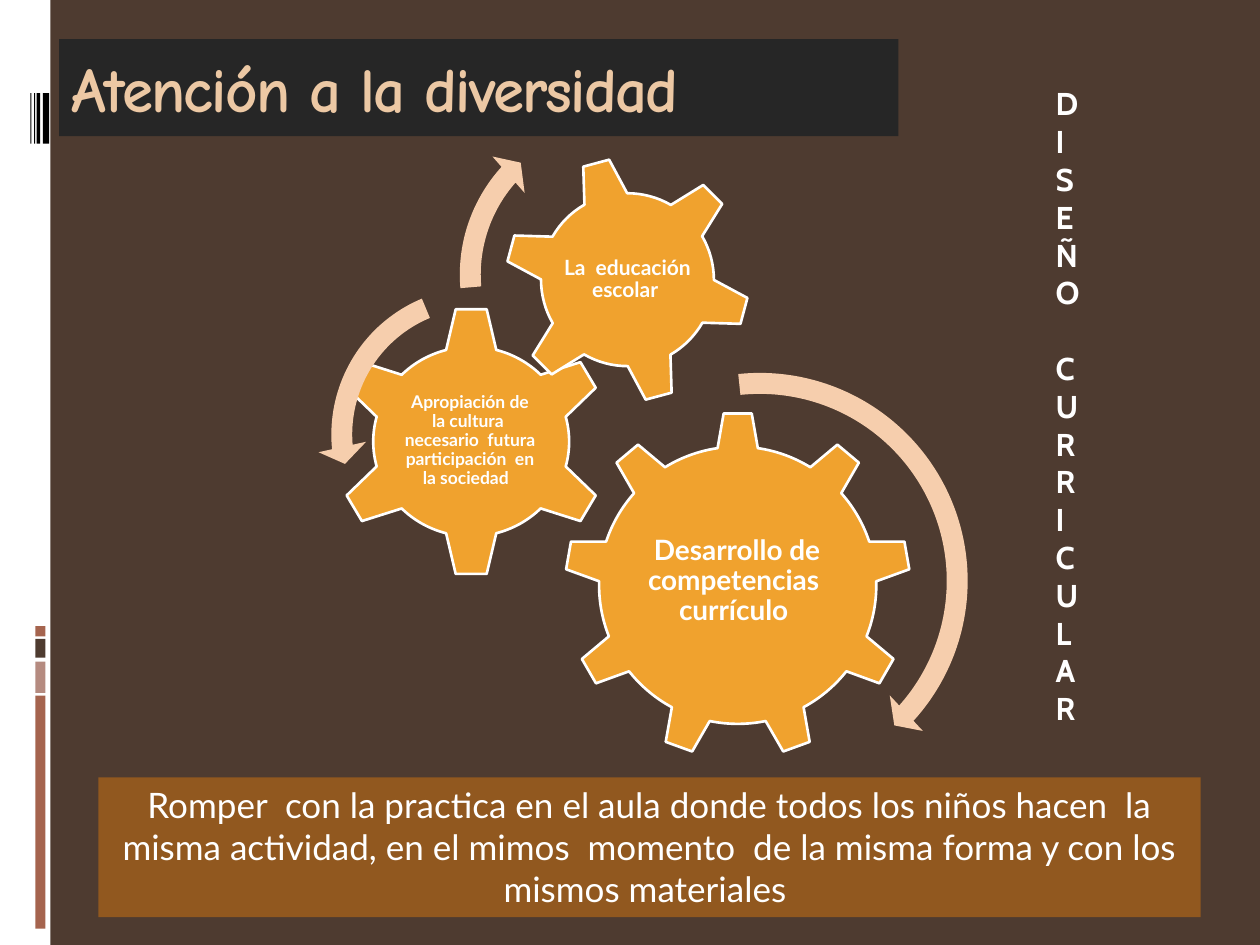
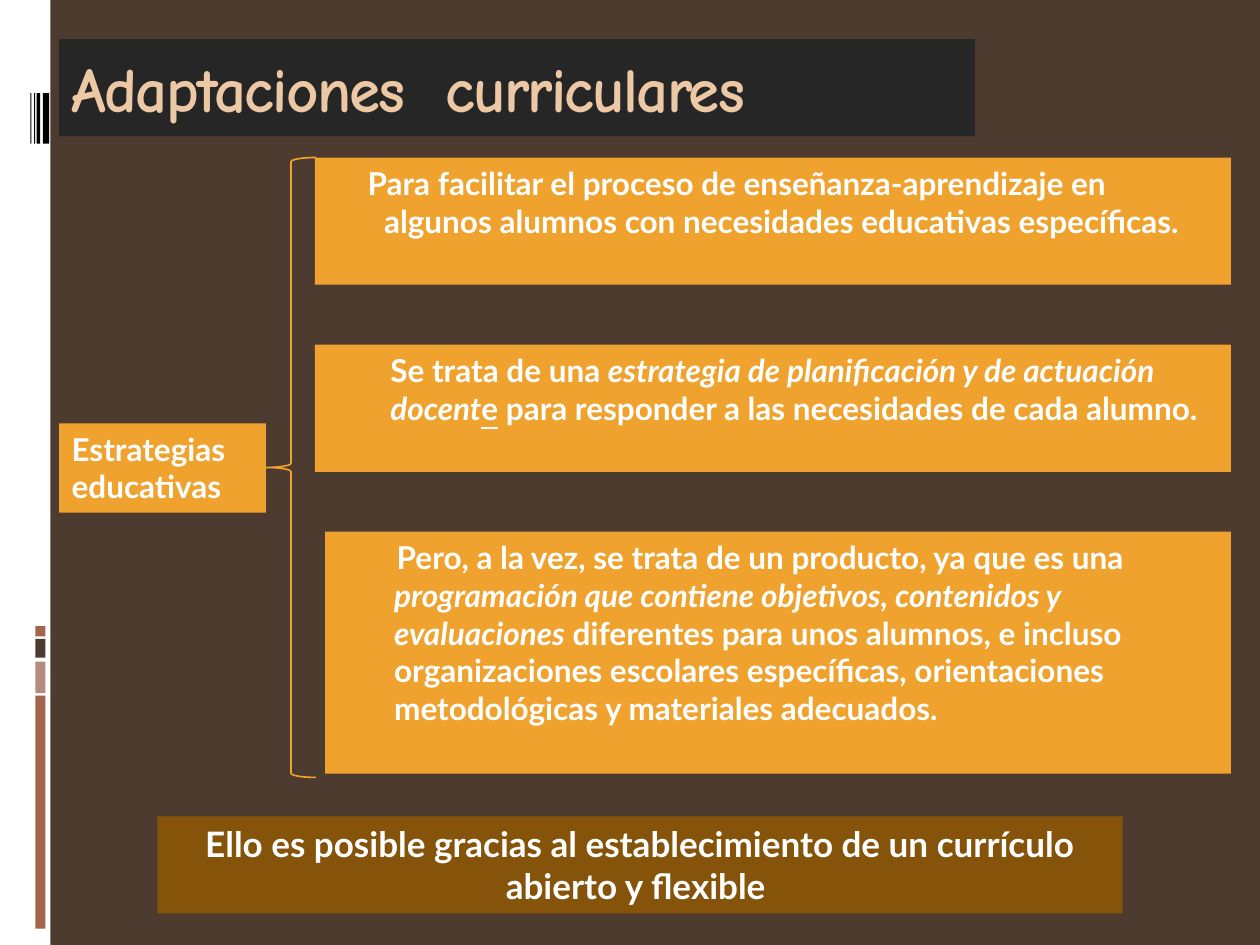
"""Build two slides on attention to diversity and curricular adaptations."""
from dataclasses import dataclass

from pptx import Presentation
from pptx.dml.color import RGBColor
from pptx.enum.shapes import MSO_SHAPE
from pptx.enum.text import MSO_ANCHOR, MSO_AUTO_SIZE, PP_ALIGN
from pptx.oxml.ns import qn
from pptx.util import Inches, Pt


@dataclass(frozen=True)
class Theme:
    background: str = "4E3B30"
    white: str = "FFFFFF"
    black: str = "000000"
    rust: str = "A5644E"
    rose: str = "B58B80"
    title_fill: str = "262626"
    title_text: str = "ECC8A4"
    orange: str = "F0A22E"
    peach: str = "F6CEAD"
    brown: str = "91581F"
    dark_brown: str = "85540A"
    title_font: str = "Comic Neue"
    body_font: str = "Lato"
    column_font: str = "Cabin"
    title_size: int = 36
    conclusion_size: int = 20
    body_size: int = 18


theme = Theme()
presentation = Presentation()
presentation.slide_width, presentation.slide_height = Inches(10), Inches(7.5)
COLUMN = presentation.slide_width / 100
ROW = presentation.slide_height / 75

TITLE = {"name": theme.title_font, "size": Pt(theme.title_size), "bold": True}
BODY = {"name": theme.body_font, "size": Pt(theme.body_size), "bold": True}
CONCLUSION = BODY | {"size": Pt(theme.conclusion_size)}
LETTER = BODY | {"name": theme.column_font}
ITALIC = {"italic": True}
CENTERED = {"alignment": PP_ALIGN.CENTER}


def place(shapes, kind, box, fill=None, line=None, line_width=1.5):
    """Add a preset shape, or a text box when kind is None, on the grid."""
    left, top, width, height = box
    frame = [round(n) for n in (left * COLUMN, top * ROW, width * COLUMN, height * ROW)]
    if kind is None:
        return shapes.add_textbox(*frame)
    shape = shapes.add_shape(kind, *frame)
    shape.shadow.inherit = False
    if fill:
        shape.fill.solid()
        shape.fill.fore_color.rgb = RGBColor.from_string(fill)
    else:
        shape.fill.background()
    if line:
        shape.line.color.rgb = RGBColor.from_string(line)
        shape.line.width = Pt(line_width)
    else:
        shape.line.fill.background()
    return shape


def write(shape, paragraphs, font, layout=None, color=theme.white, frame=None):
    """Fill a shape with paragraphs, each a list of (text, font changes)."""
    text_frame = shape.text_frame
    frame_format = {"word_wrap": True, "auto_size": MSO_AUTO_SIZE.NONE,
                    "vertical_anchor": MSO_ANCHOR.TOP} | (frame or {})
    for name, value in frame_format.items():
        setattr(text_frame, name, value)
    for index, runs in enumerate(paragraphs):
        paragraph = text_frame.add_paragraph() if index else text_frame.paragraphs[0]
        for name, value in ({"alignment": PP_ALIGN.LEFT} | (layout or {})).items():
            setattr(paragraph, name, value)
        for text, changes in runs:
            run = paragraph.add_run()
            run.text = text
            for name, value in (font | changes).items():
                setattr(run.font, name, value)
            run.font.color.rgb = RGBColor.from_string(color)


background = presentation.slide_master.background.fill
background.solid()
background.fore_color.rgb = RGBColor.from_string(theme.background)
title_only = presentation.slide_layouts[5]
for placeholder in list(title_only.placeholders)[1:]:
    title_only.shapes.element.remove(placeholder.element)

slides = []
for heading, title_width in [("Atención a la diversidad", 66.6),
                             ("Adaptaciones  curriculares", 72.7)]:
    slide = presentation.slides.add_slide(title_only)
    title = slide.shapes.title
    position = {"left": 4.7 * COLUMN, "top": 3.1 * ROW,
                "width": title_width * COLUMN, "height": 7.7 * ROW}
    for name, value in position.items():
        setattr(title, name, round(value))
    title.fill.solid()
    title.fill.fore_color.rgb = RGBColor.from_string(theme.title_fill)
    write(title, [[(heading, {})]], TITLE, color=theme.title_text,
          frame={"vertical_anchor": MSO_ANCHOR.MIDDLE})
    for run_properties in title.element.iter(qn("a:rPr")):
        run_properties.set("spc", "-100")
    slides.append(slide)
diversity, adaptations = slides

side_bars = [((0, 0, 4, 75), theme.white)]
for top, height, color in [(55.2, 18.5, theme.rust), (52.5, 2.5, theme.rose),
                           (50.7, 1.5, theme.background), (49.7, 0.8, theme.rust)]:
    side_bars.append(((2.8, top, 0.8, height), color))
for left, width in [(3.4, 0.5), (2.9, 0.3), (2.7, 0.1), (2.4, 0.1)]:
    side_bars.append(((left, 7.4, width, 4), theme.black))
bars = [place(diversity.shapes, MSO_SHAPE.RECTANGLE, box, color)
        for box, color in side_bars]
for bar in bars:
    title_only.shapes.element.append(bar.element)

practice = place(diversity.shapes, MSO_SHAPE.RECTANGLE, (7.8, 61.7, 87.5, 11.1), theme.brown)
write(practice, [[("Romper  con la practica en el aula donde todos los niños hacen  la misma "
                   "actividad, en el mimos  momento  de la misma forma y con los mismos "
                   "materiales ", {})]], CONCLUSION | {"bold": False}, CENTERED)

gears = [
    (MSO_SHAPE.GEAR_9, (44.8, 32.7, 27.5, 27.5), 0, (50.3, 39.1, 16.4, 14.1), 16,
     "Desarrollo de competencias  currículo "),
    (MSO_SHAPE.GEAR_6, (26.4, 24.3, 22, 21.5), 0, (31.8, 29.7, 11, 10.6), 10,
     "Apropiación de la cultura  necesario  futura participación  en la sociedad  "),
    (MSO_SHAPE.GEAR_6, (40, 12.4, 19.6, 19.6), 345, (44.3, 16.7, 11, 11), 12,
     "La  educación escolar "),
]
group = diversity.shapes.add_group_shape()
margins = {f"margin_{side}": Inches(0.02) for side in ("left", "right", "top", "bottom")}
for kind, gear_box, rotation, text_box, size, text in gears:
    gear = place(group.shapes, kind, gear_box, theme.orange, theme.white)
    gear.rotation = rotation
    label = place(group.shapes, None, text_box)
    write(label, [[(text, {})]], BODY | {"size": Pt(size)}, CENTERED | {"line_spacing": 0.9},
          frame=margins | {"vertical_anchor": MSO_ANCHOR.MIDDLE})

BAND, HEAD = 1.66, 1.93
arrows = [
    (MSO_SHAPE.CIRCULAR_ARROW, 42.7, 28.5, 35.2, (4.98, 42.08, 264.06)),
    (MSO_SHAPE.LEFT_CIRCULAR_ARROW, 25.2, 21.7, 25.6, (7.17, 174.82, 247.3)),
    (MSO_SHAPE.CIRCULAR_ARROW, 35.4, 8, 27.6, (6.57, 221.9, 175.14)),
]
for kind, left, top, diameter, degrees in arrows:
    arrow = place(group.shapes, kind, (left, top, diameter, diameter), theme.peach)
    angles = [degree * 60000 / 100000 for degree in degrees]
    for index, value in enumerate([BAND / diameter, *angles, HEAD / diameter]):
        arrow.adjustments[index] = value

design = place(diversity.shapes, None, (82.8, 6.2, 5.5, 55.5))
words = ["DISEÑO", "CURRICULAR"]
write(design, [[(letter, {})] for letter in "".join(words)], LETTER)
design.text_frame.paragraphs[len(words[0])].space_before = Pt(21.6)

strategies = place(adaptations.shapes, MSO_SHAPE.RECTANGLE, (4.7, 33.6, 16.4, 7.1), theme.orange)
write(strategies, [[("Estrategias educativas", {})]], BODY)

RIGHT, TOP, STEP = 97.7, 12.5, 14.85
statements = [
    (25, 10.1, 0.45, -0.13, [
        ("Para facilitar el proceso de enseñanza-aprendizaje en algunos alumnos con "
         "necesidades educativas específicas.", {})]),
    (25, 10.1, 0.5, 0, [
        ("Se trata de una ", {}),
        ("estrategia de planificación y de actuación docent", ITALIC),
        ("e", {"underline": True}),
        (" para responder a las necesidades de cada alumno.", {})]),
    (25.8, 19.2, 0.45, 0.02, [
        ("Pero, a la vez, se trata de un producto, ya que es una ", {}),
        ("programación que contiene objetivos, contenidos y evaluaciones", ITALIC),
        (" diferentes para unos alumnos, e incluso organizaciones escolares específicas, "
         "orientaciones metodológicas y materiales adecuados.", {})]),
]
for index, (left, height, margin, indent, runs) in enumerate(statements):
    box = (left, TOP + index * STEP, RIGHT - left, height)
    statement = place(adaptations.shapes, MSO_SHAPE.RECTANGLE, box, theme.orange)
    write(statement, [runs], BODY)
    for properties in statement.element.iter(qn("a:pPr")):
        properties.set("marL", str(Inches(margin)))
        properties.set("indent", str(Inches(indent)))

place(adaptations.shapes, MSO_SHAPE.LEFT_BRACE, (21.1, TOP, 4, 49.2),
      line=theme.orange, line_width=0.94)

conclusion = place(adaptations.shapes, MSO_SHAPE.RECTANGLE, (12.5, 64.8, 76.6, 7.7),
                   theme.dark_brown)
write(conclusion, [[("Ello es posible gracias al establecimiento de un currículo abierto y "
                     "flexible ", {})]], CONCLUSION, CENTERED)

presentation.save("out.pptx")
